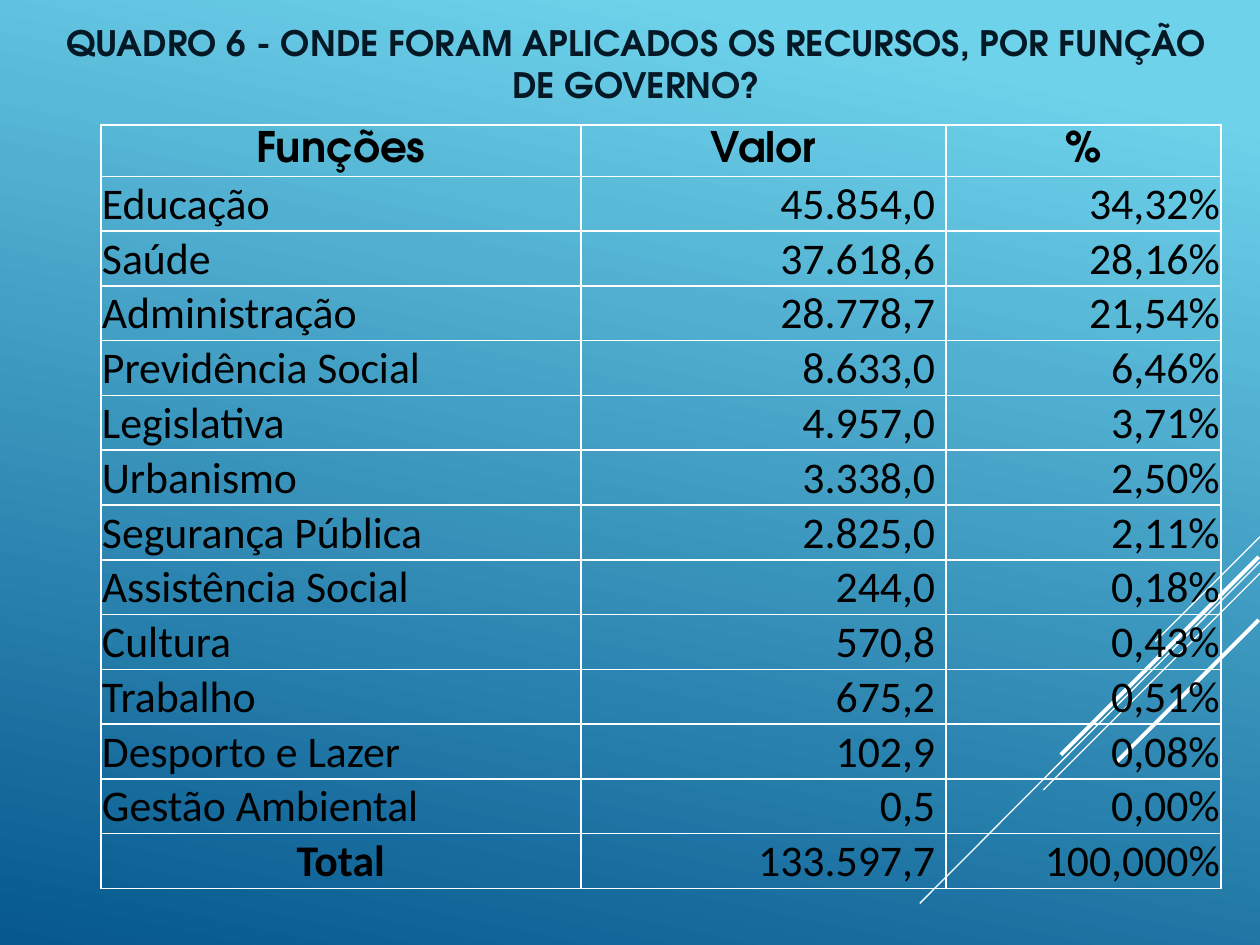
from lxml import etree
from pptx import Presentation
from pptx.dml.color import RGBColor
from pptx.enum.shapes import MSO_CONNECTOR
from pptx.enum.text import MSO_ANCHOR, PP_ALIGN
from pptx.oxml.ns import qn
from pptx.util import Pt

LEFT, CENTER, RIGHT = PP_ALIGN.LEFT, PP_ALIGN.CENTER, PP_ALIGN.RIGHT
MIDDLE, BOTTOM = MSO_ANCHOR.MIDDLE, MSO_ANCHOR.BOTTOM
STRAIGHT = MSO_CONNECTOR.STRAIGHT

TITLE = "QUADRO 6 - ONDE FORAM APLICADOS OS RECURSOS, POR FUNÇÃO DE GOVERNO?"
HEADER = ("Funções", "Valor", "%")
SPENDING = [
    ("Educação", "45.854,0", "34,32%"),
    ("Saúde", "37.618,6", "28,16%"),
    ("Administração", "28.778,7", "21,54%"),
    ("Previdência Social", "8.633,0", "6,46%"),
    ("Legislativa", "4.957,0", "3,71%"),
    ("Urbanismo", "3.338,0", "2,50%"),
    ("Segurança Pública", "2.825,0", "2,11%"),
    ("Assistência Social", "244,0", "0,18%"),
    ("Cultura", "570,8", "0,43%"),
    ("Trabalho", "675,2", "0,51%"),
    ("Desporto e Lazer", "102,9", "0,08%"),
    ("Gestão Ambiental", "0,5", "0,00%"),
    ("Total", "133.597,7", "100,000%"),
]
COLUMN_WIDTHS = (274.3, 208.8, 157)
HEADER_HEIGHT, ROW_HEIGHT = 29, 31.3
# Right margin per column; the values stand off their border.
RIGHT_MARGINS = (0.7, 6.4, 0.7)

# Start x, start y, end x, end y, width
RAYS = [
    (720, 306.7, 660.2, 366.5, 0.75),
    (720, 321.1, 525.6, 516.2, 0.75),
    (720, 327.6, 596.2, 451.4, 0.75),
    (719.3, 318.2, 606.2, 431.3, 2.25),
    (719.3, 354.2, 637.2, 436.3, 2.25),
]


def rgb(value):
    return RGBColor.from_string(value)


class Deck:
    heading_font, body_font = "TeX Gyre Adventor", "Calibri"
    title_ink, ink, rule = "051825", "000000", "FFFFFF"
    background_stops = ((0.1, "6ED2EB"), (1, "06588E"))
    background_angle = 258

    def __init__(self, width, height):
        self.presentation = Presentation()
        self.presentation.slide_width = Pt(width)
        self.presentation.slide_height = Pt(height)
        blank = self.presentation.slide_layouts[6]
        self.slide = self.presentation.slides.add_slide(blank)

    def background(self):
        fill = self.slide.background.fill
        fill.gradient()
        fill.gradient_angle = self.background_angle
        for stop, (position, color) in zip(fill.gradient_stops, self.background_stops):
            stop.position = position
            stop.color.rgb = rgb(color)

    def ray(self, x1, y1, x2, y2, width):
        ray = self.slide.shapes.add_connector(
            STRAIGHT, Pt(x1), Pt(y1), Pt(x2), Pt(y2))
        ray.line.color.rgb = rgb(self.rule)
        ray.line.width = Pt(width)
        etree.SubElement(ray._element.spPr, qn("a:effectLst"))

    def fill_text(self, frame, text, align, color, **font):
        paragraph = frame.paragraphs[0]
        paragraph.alignment = align
        run = paragraph.add_run()
        run.text = text
        run.font.color.rgb = rgb(color)
        for name, value in font.items():
            setattr(run.font, name, value)

    def title(self, text, left, top, width, height):
        box = self.slide.shapes.add_textbox(Pt(left), Pt(top), Pt(width), Pt(height))
        frame = box.text_frame
        frame.word_wrap = True
        frame.vertical_anchor = MIDDLE
        self.fill_text(frame, text, CENTER, self.title_ink,
                       name=self.heading_font, size=Pt(20), bold=True)

    def borders(self, cell):
        """Draw all four sides; they must come before the cell's fill."""
        properties = cell._tc.get_or_add_tcPr()
        for index, side in enumerate(("lnL", "lnR", "lnT", "lnB")):
            line = etree.Element(qn(f"a:{side}"), w=str(Pt(1)))
            fill = etree.SubElement(line, qn("a:solidFill"))
            etree.SubElement(fill, qn("a:srgbClr"), val=self.rule)
            properties.insert(index, line)

    def cell(self, cell, text, align, anchor, right_margin, **font):
        margins = {"margin_left": 0.7, "margin_top": 0.7,
                   "margin_right": right_margin, "margin_bottom": 0}
        for name, value in margins.items():
            setattr(cell, name, Pt(value))
        cell.vertical_anchor = anchor
        cell.fill.background()
        self.borders(cell)
        self.fill_text(cell.text_frame, text, align, self.ink, **font)

    def table(self, header, rows, left, top):
        heights = [HEADER_HEIGHT] + [ROW_HEIGHT] * len(rows)
        table = self.slide.shapes.add_table(
            len(heights), len(header), Pt(left), Pt(top),
            Pt(sum(COLUMN_WIDTHS)), Pt(sum(heights))).table
        table.first_row = table.horz_banding = False
        for column, width in zip(table.columns, COLUMN_WIDTHS):
            column.width = Pt(width)
        for row, height in zip(table.rows, heights):
            row.height = Pt(height)

        for column, label in enumerate(header):
            self.cell(table.cell(0, column), label, CENTER, MIDDLE, 0.7,
                      name=self.heading_font, size=Pt(24), bold=True)
        for row, values in enumerate(rows, 1):
            is_total = row == len(rows)
            aligns = (CENTER if is_total else LEFT, RIGHT, RIGHT)
            for column, value in enumerate(values):
                self.cell(table.cell(row, column), value, aligns[column], BOTTOM,
                          RIGHT_MARGINS[column], name=self.body_font, size=Pt(25),
                          bold=is_total and column == 0)


def main():
    deck = Deck(720, 540)
    deck.background()
    for ray in RAYS:
        deck.ray(*ray)
    deck.title(TITLE, 20.9, 9.4, 685.4, 53.3)
    deck.table(HEADER, SPENDING, 57.6, 71.3)
    deck.presentation.save("out.pptx")


if __name__ == "__main__":
    main()
